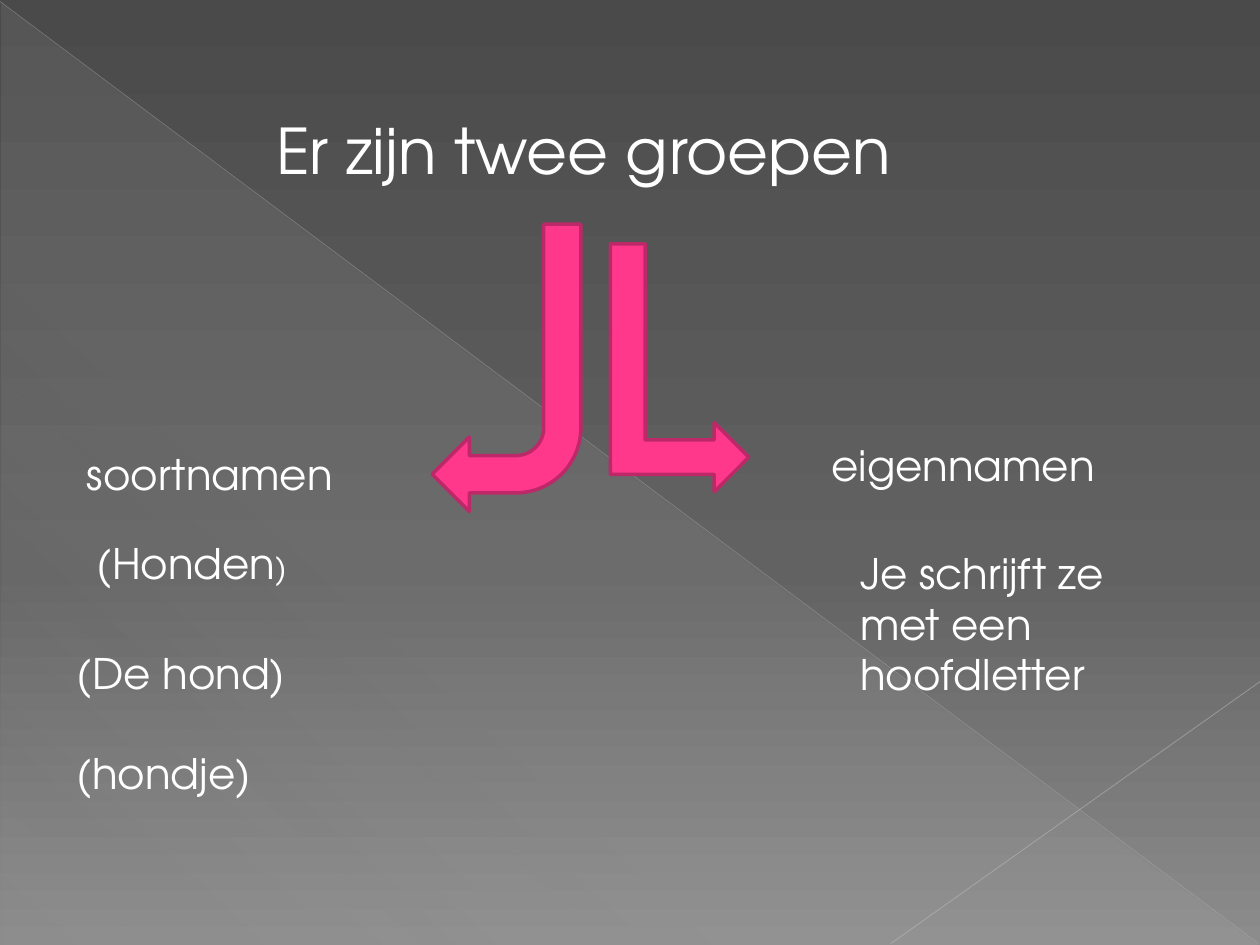
from lxml import etree
from pptx import Presentation
from pptx.dml.color import RGBColor
from pptx.enum.shapes import MSO_CONNECTOR, MSO_SHAPE
from pptx.enum.text import MSO_ANCHOR, MSO_AUTO_SIZE, PP_ALIGN
from pptx.oxml.ns import qn
from pptx.util import Cm, Pt

STRAIGHT = MSO_CONNECTOR.STRAIGHT
TRIANGLE = MSO_SHAPE.RIGHT_TRIANGLE
BENT_ARROW = MSO_SHAPE.BENT_ARROW
BENT_UP_ARROW = MSO_SHAPE.BENT_UP_ARROW
TOP = MSO_ANCHOR.TOP
GROW = MSO_AUTO_SIZE.SHAPE_TO_FIT_TEXT
LEFT = PP_ALIGN.LEFT

FONT = "TeX Gyre Adventor"
WHITE, PINK, DARK_PINK = "FFFFFF", "FF388C", "BD2968"
TITLE_ONLY = 5


def rgb(color):
    """Turn a hex string into a colour."""
    return RGBColor.from_string(color)


def add_alpha(clr, percent):
    """Give a colour element an opacity in percent."""
    etree.SubElement(clr, qn("a:alpha"), val=str(percent * 1000))


def set_gradient(fill, element, stops, angle):
    """Fill with a linear gradient of (position, colour, opacity) stops."""
    fill.gradient()
    grad = next(element.iter(qn("a:gradFill")))
    for child in list(grad):
        grad.remove(child)
    gs_lst = etree.SubElement(grad, qn("a:gsLst"))
    for pos, color, opacity in stops:
        gs = etree.SubElement(gs_lst, qn("a:gs"), pos=str(pos * 1000))
        clr = etree.SubElement(gs, qn("a:srgbClr"), val=color)
        if opacity < 100:
            add_alpha(clr, opacity)
    etree.SubElement(grad, qn("a:lin"), ang=str(angle * 60000), scaled="0")


def write_text(sp, *runs, size=24, color=WHITE):
    """Write runs into a shape; a run is a text or a (text, size) pair."""
    tf = sp.text_frame
    tf.word_wrap = True
    tf.auto_size = GROW
    tf.vertical_anchor = TOP
    p = tf.paragraphs[0]
    p.alignment = LEFT
    for run in runs:
        text, run_size = (run, size) if isinstance(run, str) else run
        r = p.add_run()
        r.text = text
        r.font.name = FONT
        r.font.size = Pt(run_size)
        r.font.color.rgb = rgb(color)


def add_title(s, text):
    """Place and format the title placeholder."""
    sp = s.shapes.title
    sp.left, sp.top, sp.width, sp.height = Cm(5.31), Cm(2.13), Cm(14.4), Cm(1.8)
    write_text(sp, text, size=36)


def add_label(s, x, y, w, *runs, h=1.27):
    """Add a text box."""
    write_text(s.shapes.add_textbox(Cm(x), Cm(y), Cm(w), Cm(h)), *runs)


def add_hairline(s, x1, y1, x2, y2, color, width, opacity):
    """Add a thin translucent line."""
    line = s.shapes.add_connector(STRAIGHT, Cm(x1), Cm(y1), Cm(x2), Cm(y2))
    line.line.color.rgb = rgb(color)
    line.line.width = Pt(width)
    add_alpha(next(line.element.spPr.iter(qn("a:srgbClr"))), opacity)
    etree.SubElement(line.element.spPr, qn("a:effectLst"))


def add_arrow(s, kind, x, y, w, h, rotation):
    """Add a pink block arrow."""
    sp = s.shapes.add_shape(kind, Cm(x), Cm(y), Cm(w), Cm(h))
    sp.shadow.inherit = False
    sp.rotation = rotation
    sp.fill.solid()
    sp.fill.fore_color.rgb = rgb(PINK)
    sp.line.color.rgb = rgb(DARK_PINK)
    sp.line.width = Pt(2)


def add_backdrop(s):
    """Add the grey background, the pale triangle and the two hairlines."""
    set_gradient(s.background.fill, s.element,
                 [(0, "4A4A4A", 100), (60, "626262", 100), (100, "8C8C8C", 100)], 90)
    sp = s.shapes.add_shape(TRIANGLE, Cm(0.03), Cm(0.05), Cm(25.35), Cm(19))
    sp.shadow.inherit = False
    sp.line.fill.background()
    set_gradient(sp.fill, sp.element,
                 [(0, "D2D2D2", 10), (70, "D2D2D2", 8), (100, "D2D2D2", 1)], 133)
    add_hairline(s, 0, 0.03, 25.37, 19.02, "BFBFBF", 0.39, 35)
    add_hairline(s, 25.4, 13.74, 17.96, 19.02, "C6C6C6", 0.47, 45)


def main():
    """Build the slide and save it."""
    prs = Presentation()
    prs.slide_width, prs.slide_height = Cm(25.4), Cm(19.05)
    s = prs.slides.add_slide(prs.slide_layouts[TITLE_ONLY])
    add_backdrop(s)
    add_title(s, "Er zijn twee groepen")
    add_arrow(s, BENT_UP_ARROW, 11.2, 6.02, 5, 2.79, 90)
    add_arrow(s, BENT_ARROW, 8.71, 4.52, 3, 5.79, 180)
    add_label(s, 1.5, 8.92, 6.6, "soortnamen")
    add_label(s, 16.51, 8.74, 6.6, "eigennamen")
    add_label(s, 1.7, 10.72, 4.8, "(Honden", (")", 18))
    add_label(s, 1.3, 12.93, 5, "(De hond)")
    add_label(s, 1.3, 14.94, 4.8, "(hondje)")
    add_label(s, 17.09, 10.92, 6.2, "Je schrijft ze met een hoofdletter", h=3.33)
    prs.save("out.pptx")


if __name__ == "__main__":
    main()
